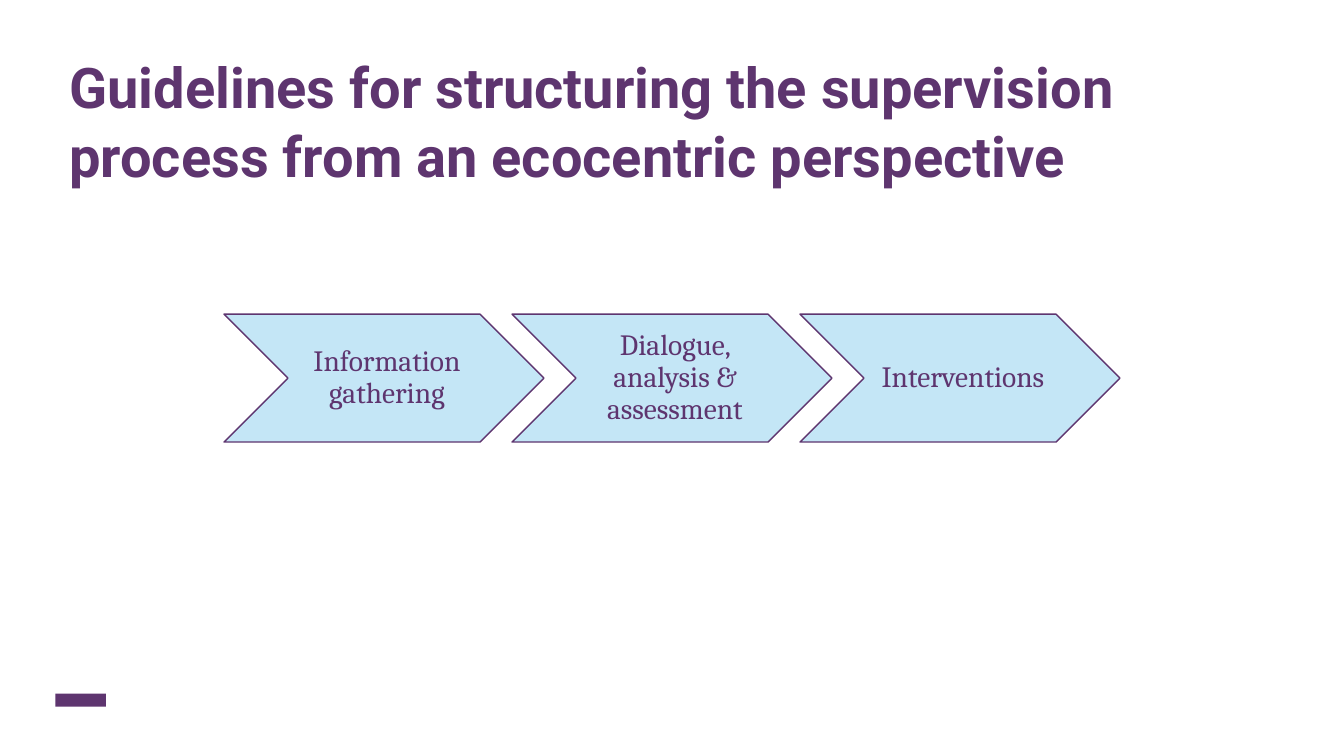
import pptx
import pptx.util
import pptx.dml.color
import pptx.enum.shapes
import pptx.enum.text

Pt = pptx.util.Pt
ALIGN = pptx.enum.text.PP_ALIGN
ANCHOR = pptx.enum.text.MSO_ANCHOR
SHAPE = pptx.enum.shapes.MSO_SHAPE
INK = {"purple": "5E356F", "sky": "C4E6F6"}
STEPS = ["Information gathering", "Dialogue, analysis & assessment", "Interventions"]


def color(name):
    return pptx.dml.color.RGBColor.from_string(INK[name])


def assign(item, values):
    for key, value in values.items():
        setattr(item, key, value)


def solid(slide, kind, fill, left, top, width, height):
    shape = slide.shapes.add_shape(kind, Pt(left), Pt(top), Pt(width), Pt(height))
    shape.shadow.inherit = False
    shape.fill.solid()
    shape.fill.fore_color.rgb = color(fill)
    shape.line.color.rgb = color("purple")
    shape.line.width = Pt(1)
    return shape


def write(shape, text, pads, anchor, para, font):
    frame = shape.text_frame
    frame.text = text
    sides = ("margin_left", "margin_top", "margin_right", "margin_bottom")
    assign(frame, dict(zip(sides, map(Pt, pads))))
    assign(frame, {"word_wrap": True, "vertical_anchor": anchor,
                   "auto_size": pptx.enum.text.MSO_AUTO_SIZE.NONE})
    line = frame.paragraphs[0]
    assign(line, para)
    assign(line.runs[0].font, font)
    line.runs[0].font.color.rgb = color("purple")


# Heading in the title placeholder
def heading(slide, left, top, width, height):
    title = slide.shapes.title
    assign(title, {"left": Pt(left), "top": Pt(top),
                   "width": Pt(width), "height": Pt(height)})
    write(title,
          "Guidelines for structuring the supervision "
          "process from an ecocentric perspective",
          (0, 0, 0, 0), ANCHOR.TOP,
          {"alignment": ALIGN.LEFT, "line_spacing": 1.04},
          {"name": "Roboto", "size": Pt(40), "bold": True})


# One chevron with its label between notch and point
def step(slide, text, left, top, width, height):
    solid(slide, SHAPE.CHEVRON, "sky", left, top, width, height)
    notch = height / 2
    label = slide.shapes.add_textbox(Pt(left + notch), Pt(top),
                                     Pt(width - 2 * notch), Pt(height))
    write(label, text, (6.3, 2.1, 2.1, 2.1), ANCHOR.MIDDLE,
          {"alignment": ALIGN.CENTER, "line_spacing": 0.9},
          {"name": "Cambria", "size": Pt(21)})


# Row of chevrons, each overlapping the last by a tenth
def process(slide, left, top, width, height):
    size = width / (1 + 0.9 * (len(STEPS) - 1))
    for rank, text in enumerate(STEPS):
        step(slide, text, left + rank * 0.9 * size, top, size, height)


# Plain brand mark in the corner
def badge(slide, left, top, width, height):
    mark = solid(slide, SHAPE.RECTANGLE, "purple", left, top, width, height)
    mark.line.fill.background()


def main():
    deck = pptx.Presentation()
    assign(deck, {"slide_width": Pt(960), "slide_height": Pt(540)})
    slide = deck.slides.add_slide(deck.slide_layouts[5])
    badge(slide, 39.6, 495.4, 36, 9.4)
    heading(slide, 49.6, 35.3, 855.4, 70.6)
    process(slide, 160, 224.4, 640, 91.4)
    deck.save("out.pptx")


if __name__ == "__main__":
    main()
